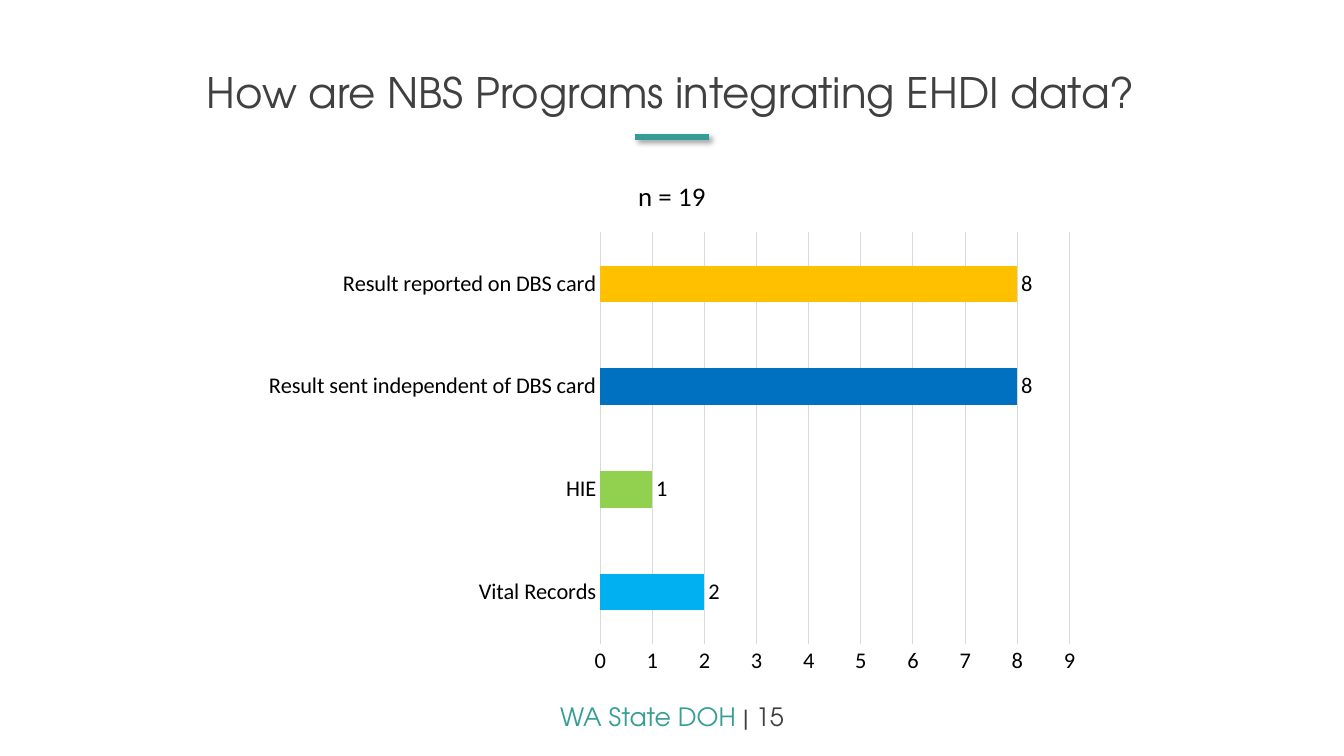
from lxml.etree import SubElement
from pptx import Presentation
from pptx.chart.data import CategoryChartData
from pptx.dml.color import RGBColor
from pptx.enum.chart import XL_CHART_TYPE, XL_LABEL_POSITION, XL_TICK_MARK
from pptx.enum.shapes import MSO_CONNECTOR
from pptx.enum.text import MSO_ANCHOR, PP_ALIGN
from pptx.oxml.ns import qn
from pptx.util import Emu, Pt

EMU_PER_PX = 9144
WIDTH, HEIGHT = 1333, 750
TEAL, DARK, BLACK, GRID = "349D96", "404040", "000000", "D9D9D9"


def px(length):
    return Emu(length * EMU_PER_PX)


def color(hex_value):
    return RGBColor.from_string(hex_value)


def style_font(font, name, size, hex_value):
    font.name = name
    font.size = Pt(size)
    font.bold = False
    font.color.rgb = color(hex_value)


class SlideBuilder:
    heading_font = "TeX Gyre Adventor"
    chart_font = "Calibri"
    chart_size = 16

    def __init__(self, slide):
        self.slide = slide

    def text(self, left, top, width, height, runs, size, line_spacing=1.0):
        """Add one centred line made of (text, colour) runs."""
        box = self.slide.shapes.add_textbox(px(left), px(top), px(width), px(height))
        frame = box.text_frame
        frame.word_wrap = True
        frame.vertical_anchor = MSO_ANCHOR.TOP
        paragraph = frame.paragraphs[0]
        paragraph.alignment = PP_ALIGN.CENTER
        paragraph.line_spacing = line_spacing
        for content, hex_value in runs:
            run = paragraph.add_run()
            run.text = content
            style_font(run.font, self.heading_font, size, hex_value)

    def shadowed_line(self, left, right, y, hex_value, weight):
        line = self.slide.shapes.add_connector(
            MSO_CONNECTOR.STRAIGHT, px(left), px(y), px(right), px(y))
        line.line.color.rgb = color(hex_value)
        line.line.width = Pt(weight)
        effects = SubElement(line._element.spPr, qn("a:effectLst"))
        shadow = SubElement(effects, qn("a:outerShdw"), blurRad=str(Pt(4)),
                            dist=str(Pt(3)), dir="2700000", algn="tl", rotWithShape="0")
        shadow_color = SubElement(shadow, qn("a:srgbClr"), val=BLACK)
        SubElement(shadow_color, qn("a:alpha"), val="40000")

    def bar_chart(self, left, top, width, height, title, bars):
        """Add horizontal bars from (category, value, colour), bottom to top."""
        data = CategoryChartData()
        data.categories = [category for category, _, _ in bars]
        data.add_series(title, [value for _, value, _ in bars])
        chart = self.slide.shapes.add_chart(
            XL_CHART_TYPE.BAR_CLUSTERED, px(left), px(top), px(width), px(height), data).chart
        style_font(chart.font, self.chart_font, self.chart_size, BLACK)
        chart.has_legend = False
        chart.has_title = True
        chart.chart_title.include_in_layout = False
        title_frame = chart.chart_title.text_frame
        title_frame.text = title
        style_font(title_frame.paragraphs[0].runs[0].font, self.chart_font, 19.2, BLACK)

        for axis in (chart.category_axis, chart.value_axis):
            axis.major_tick_mark = axis.minor_tick_mark = XL_TICK_MARK.NONE
            style_font(axis.tick_labels.font, self.chart_font, self.chart_size, BLACK)
        chart.value_axis.format.line.fill.background()
        chart.value_axis.has_major_gridlines = True
        for line in (chart.category_axis.format.line,
                     chart.value_axis.major_gridlines.format.line):
            line.color.rgb = color(GRID)
            line.width = Pt(0.75)

        plot = chart.plots[0]
        plot.gap_width = 182
        plot.vary_by_categories = False
        plot.has_data_labels = True
        labels = plot.data_labels
        labels.show_value = True
        labels.position = XL_LABEL_POSITION.OUTSIDE_END
        style_font(labels.font, self.chart_font, self.chart_size, BLACK)
        for index, (_, _, hex_value) in enumerate(bars):
            fill = plot.series[0].points[index].format.fill
            fill.solid()
            fill.fore_color.rgb = color(hex_value)


def main():
    presentation = Presentation()
    presentation.slide_width, presentation.slide_height = px(WIDTH), px(HEIGHT)
    builder = SlideBuilder(presentation.slides.add_slide(presentation.slide_layouts[6]))

    builder.shadowed_line(630, 703, 136, TEAL, 4)
    builder.text(0, 691, WIDTH, 40, [("WA State DOH ", TEAL), ("| 15", DARK)], 18)
    builder.text(-1, 67, WIDTH, 53,
                 [("How are NBS Programs integrating EHDI data?", DARK)], 30, 0.9)
    builder.bar_chart(250, 155, 833, 525, "n = 19", [
        ("Vital Records", 2, "00B0F0"),
        ("HIE", 1, "92D050"),
        ("Result sent independent of DBS card", 8, "0070C0"),
        ("Result reported on DBS card", 8, "FFC000"),
    ])
    presentation.save("out.pptx")


if __name__ == "__main__":
    main()
